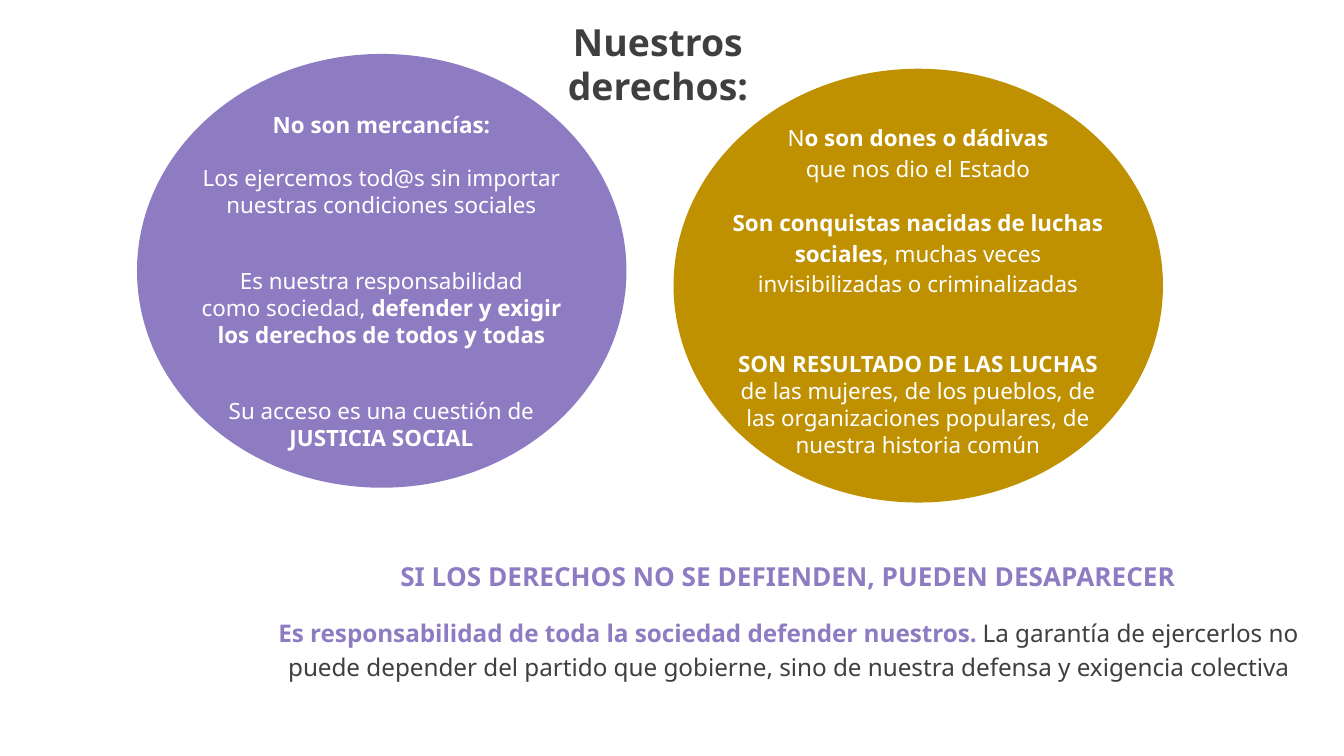
from copy import deepcopy

from pptx import Presentation
from pptx.dml.color import RGBColor
from pptx.enum.shapes import MSO_SHAPE
from pptx.enum.text import MSO_ANCHOR, MSO_AUTO_SIZE, PP_ALIGN
from pptx.util import Cm, Pt

PURPLE = RGBColor(0x8E, 0x7C, 0xC3)
GOLD = RGBColor(0xBF, 0x90, 0x00)
WHITE = RGBColor(0xFF, 0xFF, 0xFF)
DARK = RGBColor(0x3F, 0x3F, 0x3F)

FONT = "Noto Sans"
CIRCLE = MSO_SHAPE.FLOWCHART_CONNECTOR
CENTER = PP_ALIGN.CENTER
MIDDLE = MSO_ANCHOR.MIDDLE
FIXED = MSO_AUTO_SIZE.NONE
GROW = MSO_AUTO_SIZE.SHAPE_TO_FIT_TEXT

# Each paragraph: space before, line spacing, size, runs of (text, bold, colour)
GOODS = [
    (0, 1, 12, [("No son mercancías:", True, WHITE)]),
    (14.3, 1, 12, [("Los ejercemos tod@s sin importar nuestras "
                    "condiciones sociales", False, WHITE)]),
    (26.3, 1, 12, [("Es nuestra responsabilidad\ncomo sociedad, ", False, WHITE),
                   ("defender y exigir los derechos de todos y todas", True, WHITE)]),
    (26.3, 1, 12, [("Su acceso es una cuestión de\n", False, WHITE),
                   ("JUSTICIA SOCIAL", True, WHITE)]),
]
GIFTS = [
    (0, 1.15, 12, [("N", False, WHITE),
                   ("o son dones o dádivas\n", True, WHITE),
                   ("que nos dio el Estado", False, WHITE)]),
    (12, 1.15, 12, [("Son conquistas nacidas de luchas sociales", True, WHITE),
                    (", muchas veces invisibilizadas o criminalizadas",
                     False, WHITE)]),
    (28.4, 1, 12, [("SON RESULTADO DE LAS LUCHAS ", True, WHITE),
                   ("de las mujeres, de los pueblos, de las organizaciones "
                    "populares, de nuestra historia común", False, WHITE)]),
]
CLOSING = [
    (0, 1.15, 14, [("SI LOS DERECHOS NO SE DEFIENDEN, PUEDEN DESAPARECER",
                    True, PURPLE)]),
    (12, 1.15, 13, [("Es responsabilidad de toda la sociedad defender nuestros. ",
                     True, PURPLE),
                    ("La garantía de ejercerlos no puede depender del partido "
                     "que gobierne, sino de nuestra defensa y exigencia colectiva",
                     False, DARK)]),
]


def style(run, size, bold, color):
    font = run.font
    font.name = FONT
    font.size = Pt(size)
    font.bold = bold
    font.color.rgb = color


def add_break(para):
    """Break the line at the text size of the run before it."""
    last = para.runs[-1]
    para.add_line_break()
    last._r.getnext().append(deepcopy(last._r.rPr))


def add_runs(para, size, runs):
    for text, bold, color in runs:
        for i, line in enumerate(text.split("\n")):
            if i:
                add_break(para)
            if line:
                run = para.add_run()
                run.text = line
                style(run, size, bold, color)


def add_text(slide, left, top, width, height, paras):
    box = slide.shapes.add_textbox(Cm(left), Cm(top), Cm(width), Cm(height))
    frame = box.text_frame
    frame.word_wrap = True
    frame.auto_size = GROW
    frame.margin_left = frame.margin_right = Cm(0.25)
    frame.margin_top = frame.margin_bottom = Cm(0.25)
    for i, (gap, lead, size, runs) in enumerate(paras):
        para = frame.add_paragraph() if i else frame.paragraphs[0]
        para.alignment = CENTER
        para.space_before = Pt(gap)
        para.line_spacing = lead
        add_runs(para, size, runs)


def add_circle(slide, left, top, color):
    disc = slide.shapes.add_shape(CIRCLE, Cm(left), Cm(top), Cm(9.25), Cm(8.2))
    disc.shadow.inherit = False
    disc.fill.solid()
    disc.fill.fore_color.rgb = color
    disc.line.fill.background()


def set_title(slide, text):
    title = slide.shapes.title
    title.left, title.top = Cm(9.83), Cm(0.69)
    title.width, title.height = Cm(5.21), Cm(1.02)
    frame = title.text_frame
    frame.text = text
    frame.word_wrap = True
    frame.auto_size = FIXED
    frame.vertical_anchor = MIDDLE
    frame.margin_left = frame.margin_right = Cm(0.18)
    frame.margin_top = frame.margin_bottom = Cm(0.1)
    for para in frame.paragraphs:
        para.alignment = CENTER
        para.space_before = Pt(0)
        for run in para.runs:
            style(run, 20, True, DARK)


def main():
    deck = Presentation()
    deck.slide_width, deck.slide_height = Cm(25.4), Cm(14.29)
    slide = deck.slides.add_slide(deck.slide_layouts[5])

    set_title(slide, "Nuestros\nderechos:")

    # Two circles with their statements
    add_circle(slide, 2.59, 1.02, PURPLE)
    add_text(slide, 3.45, 1.85, 7.52, 7.01, GOODS)
    add_circle(slide, 12.73, 1.3, GOLD)
    add_text(slide, 13.59, 2.03, 7.52, 6.96, GIFTS)

    # Closing message
    add_text(slide, 4.8, 10.26, 20.19, 2.82, CLOSING)

    deck.save("out.pptx")


if __name__ == "__main__":
    main()
